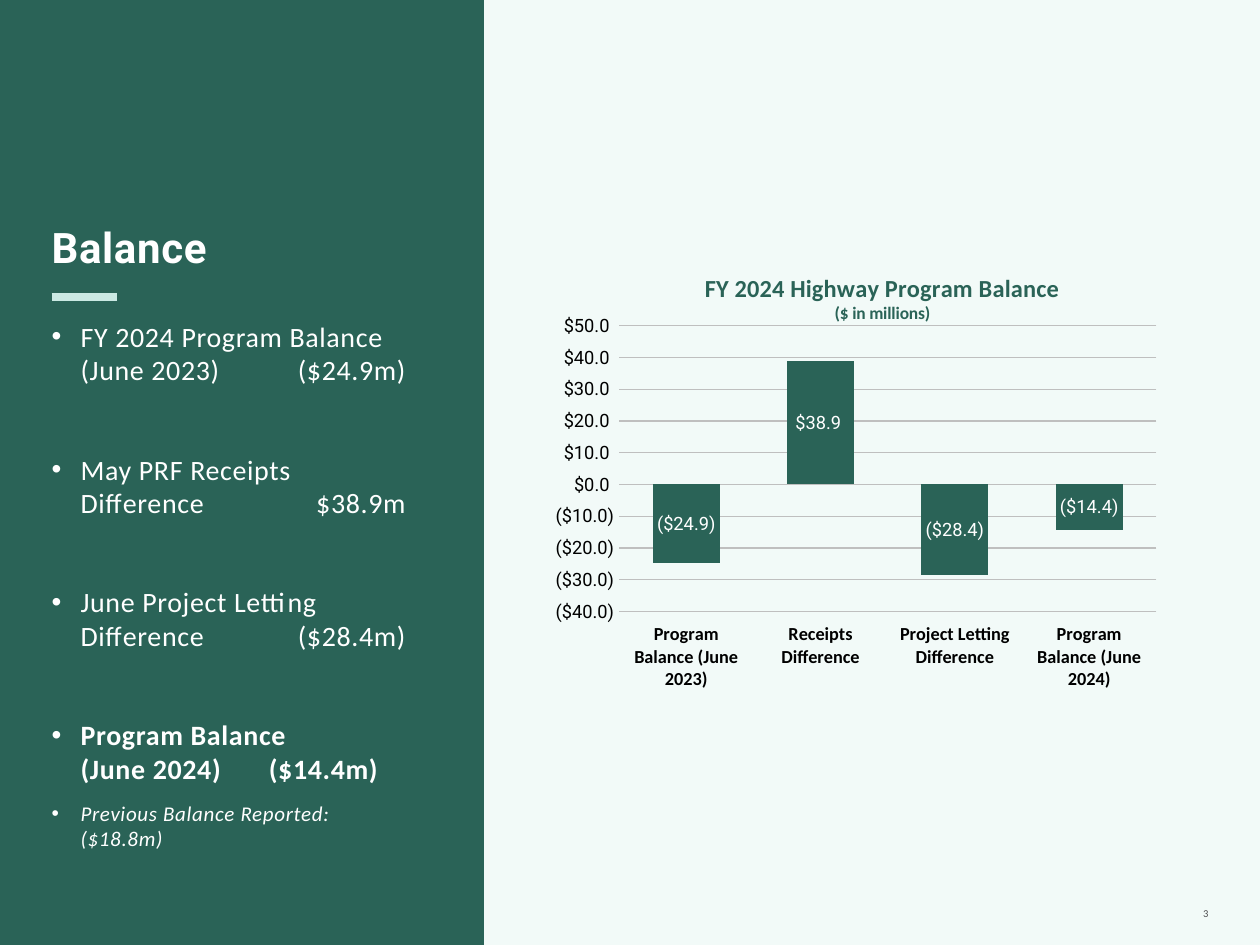
import pptx
import pptx.chart.data
import pptx.dml.color
import pptx.enum.chart
import pptx.enum.shapes
import pptx.enum.text
import pptx.oxml
import pptx.util
from lxml import etree
from pptx.dml.color import RGBColor
from pptx.util import Inches, Pt

GREEN = RGBColor(0x2A, 0x63, 0x57)
MINT = RGBColor(0xCB, 0xE9, 0xE3)
PALE = RGBColor(0xF2, 0xFA, 0xF8)
WHITE = RGBColor(0xFF, 0xFF, 0xFF)
BLACK = RGBColor(0, 0, 0)
GREY = RGBColor(0xBF, 0xBF, 0xBF)
DARK_GREY = RGBColor(0x4D, 0x4D, 0x4F)

HEADING = "Balance"
# fields: text, amount tab, space before, size, bold, italic
ITEMS = [
    ("FY 2024 Program Balance\v(June 2023)\t($24.9m)", 2.99, 9, 16, False, False),
    ("May PRF Receipts\vDifference\t$38.9m", 2.96, 37.5, 16, False, False),
    ("June Project Letting\vDifference\t($28.4m)", 2.99, 37.5, 16, False, False),
    ("Program Balance\v(June 2024)\t($14.4m)", 2.59, 37.5, 16, True, False),
    ("Previous Balance Reported:\v($18.8m)", None, 9, 12, False, True),
]
CHART_TITLE = [("FY 2024 Highway Program Balance", 14), ("($ in millions)", 10)]
BALANCES = [
    ("Program Balance (June 2023)", -24.9),
    ("Receipts Difference", 38.9),
    ("Project Letting Difference", -28.4),
    ("Program Balance (June 2024)", -14.4),
]
MONEY = '"$"#,##0.0_);\\("$"#,##0.0\\)'
TITLE_LAYOUT = {"xMode": "edge", "yMode": "edge", "x": 0.23, "y": 0.02}
PLOT_LAYOUT = {"layoutTarget": "inner", "xMode": "edge", "yMode": "edge",
               "x": 0.11, "y": 0.153, "w": 0.87, "h": 0.648}
PLOT_LAYOUT.update(x=0.097, w=0.872)


def style(font, name, size, color, bold=False, italic=False):
    font.name, font.size, font.bold, font.italic = name, Pt(size), bold, italic
    font.color.rgb = color


def track(paragraph, points):
    for run in paragraph.runs:
        run.font._element.set("spc", str(round(points * 100)))


def add_frame(slide, left, top, width, height, inset):
    frame = slide.shapes.add_textbox(
        Inches(left), Inches(top), Inches(width), Inches(height)).text_frame
    frame.word_wrap = True
    frame.margin_left = frame.margin_right = 0
    frame.margin_top = frame.margin_bottom = Inches(inset)
    return frame


def indent_item(paragraph, tab):
    props = paragraph._p.get_or_add_pPr()
    props.set("marL", str(Inches(0.23)))
    props.set("indent", str(Inches(-0.23)))
    etree.SubElement(props, pptx.oxml.ns.qn("a:buFont"), typeface="Arial")
    etree.SubElement(props, pptx.oxml.ns.qn("a:buChar"), char="•")
    if tab:
        tabs = etree.SubElement(props, pptx.oxml.ns.qn("a:tabLst"))
        etree.SubElement(tabs, pptx.oxml.ns.qn("a:tab"),
                         pos=str(Inches(tab)), algn="r")


def place(parent, anchor, values):
    for old in parent.findall(pptx.oxml.ns.qn("c:layout")):
        parent.remove(old)
    layout = etree.Element(pptx.oxml.ns.qn("c:layout"))
    manual = etree.SubElement(layout, pptx.oxml.ns.qn("c:manualLayout"))
    for key, value in values.items():
        etree.SubElement(manual, pptx.oxml.ns.qn("c:" + key), val=str(value))
    if anchor is None:
        parent.insert(0, layout)
    else:
        anchor.addnext(layout)


def add_panel(slide):
    panel = slide.shapes.add_shape(pptx.enum.shapes.MSO_SHAPE.RECTANGLE,
                                   0, 0, Inches(3.84), Inches(7.5))
    panel.shadow.inherit = False
    panel.fill.solid()
    panel.fill.fore_color.rgb = GREEN
    panel.line.fill.background()


def add_summary(slide):
    frame = add_frame(slide, 0.41, 1.76, 3.04, 5.03, 0)
    heading = frame.paragraphs[0]
    heading.text = HEADING
    heading.space_after = Pt(18)
    style(heading.runs[0].font, "Roboto", 24, WHITE, True)
    track(heading, 0.4)
    for text, tab, before, size, bold, italic in ITEMS:
        item = frame.add_paragraph()
        item.text = text
        item.space_before = Pt(before)
        indent_item(item, tab)
        style(item.font, "Calibri", size, WHITE, bold, italic)
        for run in item.runs:
            style(run.font, "Calibri", size, WHITE, bold, italic)
        track(item, 0.4)
    rule = slide.shapes.add_connector(
        pptx.enum.shapes.MSO_CONNECTOR.STRAIGHT,
        Inches(0.41), Inches(2.36), Inches(0.93), Inches(2.36))
    rule.line.color.rgb = MINT
    rule.line.width = Pt(4.5)
    etree.SubElement(rule._element.spPr, pptx.oxml.ns.qn("a:effectLst"))


def add_balance_chart(slide):
    data = pptx.chart.data.CategoryChartData()
    data.categories = [name for name, _ in BALANCES]
    data.add_series("Series 1", [value for _, value in BALANCES])
    chart = slide.shapes.add_chart(
        pptx.enum.chart.XL_CHART_TYPE.COLUMN_CLUSTERED,
        Inches(4.41), Inches(2.05), Inches(4.92), Inches(3.5), data).chart
    chart.has_legend = False
    style(chart.font, "Roboto", 10, BLACK)

    title = chart.chart_title.text_frame
    for index, (text, size) in enumerate(CHART_TITLE):
        line = title.add_paragraph() if index else title.paragraphs[0]
        line.text = text
        style(line.runs[0].font, "Calibri", size, GREEN, True)
    chart.chart_title.include_in_layout = False
    title_element = chart.chart_title._element
    place(title_element, title_element.find(pptx.oxml.ns.qn("c:tx")), TITLE_LAYOUT)
    place(chart._chartSpace.chart.plotArea, None, PLOT_LAYOUT)

    names, amounts = chart.category_axis, chart.value_axis
    for axis in (names, amounts):
        axis.major_tick_mark = pptx.enum.chart.XL_TICK_MARK.NONE
    names.tick_label_position = pptx.enum.chart.XL_TICK_LABEL_POSITION.LOW
    style(names.tick_labels.font, "Calibri", 10.5, BLACK, True)
    style(amounts.tick_labels.font, "Roboto", 10.5, BLACK)
    amounts.minimum_scale, amounts.maximum_scale, amounts.major_unit = -40, 50, 10
    amounts.tick_labels.number_format = MONEY
    amounts.tick_labels.number_format_is_linked = False
    amounts.format.line.fill.background()
    for line in (names.format.line, amounts.major_gridlines.format.line):
        line.color.rgb = GREY
        line.width = Pt(0.75)

    plot = chart.plots[0]
    plot.gap_width, plot.overlap, plot.vary_by_categories = 100, -24, False
    series = plot.series[0]
    series.invert_if_negative = False
    series.format.fill.solid()
    series.format.fill.fore_color.rgb = GREEN
    labels = series.data_labels
    labels.show_value = True
    labels.position = pptx.enum.chart.XL_LABEL_POSITION.CENTER
    labels.number_format, labels.number_format_is_linked = MONEY, False
    style(labels.font, "Roboto", 10.5, WHITE)


def add_page_number(slide):
    frame = add_frame(slide, 8.62, 6.95, 0.97, 0.4, 0.05)
    frame.vertical_anchor = pptx.enum.text.MSO_ANCHOR.BOTTOM
    number = frame.paragraphs[0]
    number.text = "3"
    number.alignment = pptx.enum.text.PP_ALIGN.RIGHT
    style(number.runs[0].font, "Calibri", 6, DARK_GREY)
    track(number, 1.1)


def main():
    deck = pptx.Presentation()
    deck.slide_width, deck.slide_height = Inches(10), Inches(7.5)
    slide = deck.slides.add_slide(deck.slide_layouts[6])
    slide.background.fill.solid()
    slide.background.fill.fore_color.rgb = PALE
    add_panel(slide)
    add_page_number(slide)
    add_balance_chart(slide)
    add_summary(slide)
    deck.save("out.pptx")


if __name__ == "__main__":
    main()
